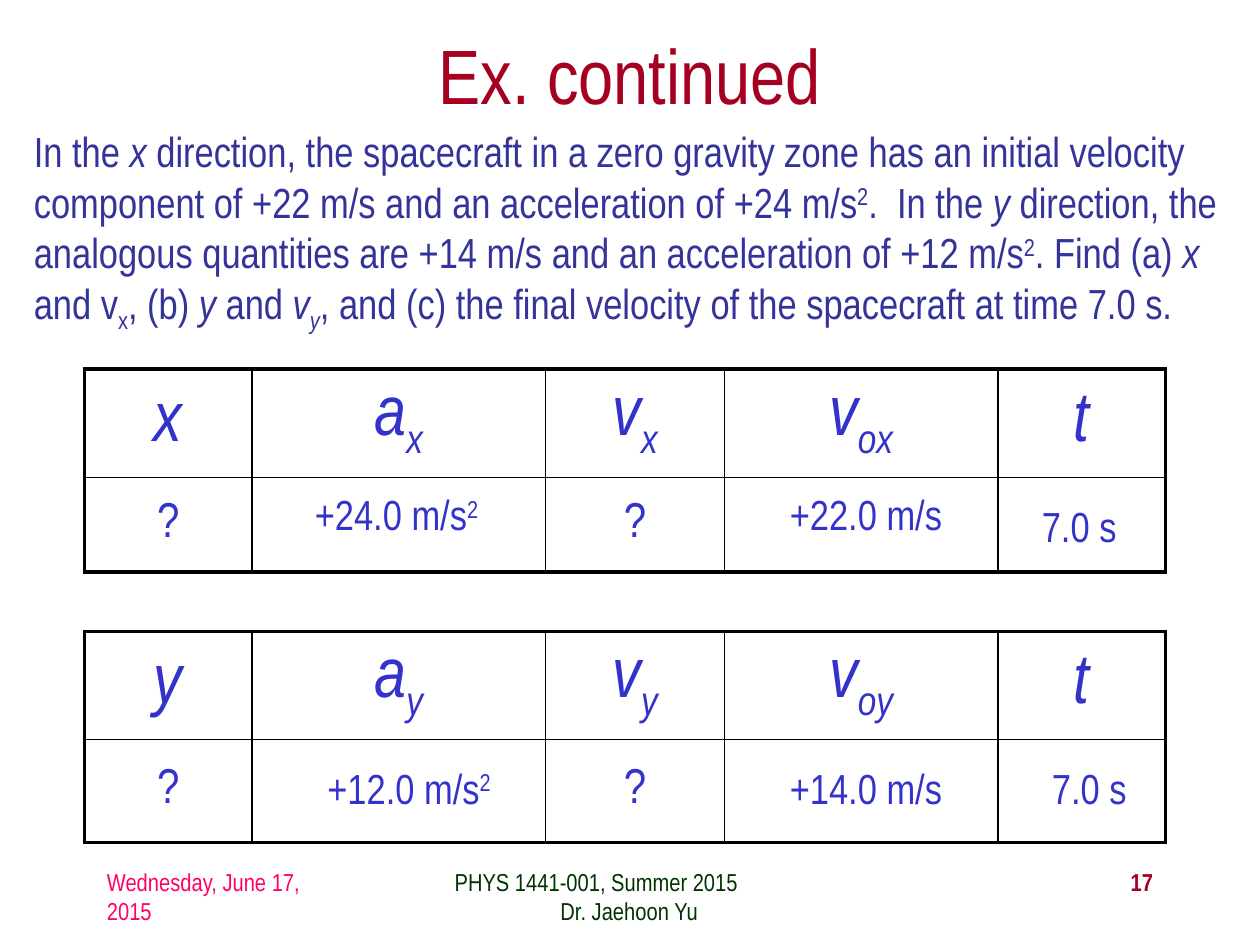
from lxml import etree
from pptx import Presentation
from pptx.dml.color import RGBColor
from pptx.enum.text import MSO_ANCHOR, PP_ALIGN
from pptx.oxml.ns import qn
from pptx.util import Inches, Pt

LEFT, CENTER, RIGHT = PP_ALIGN.LEFT, PP_ALIGN.CENTER, PP_ALIGN.RIGHT
TOP, MIDDLE = MSO_ANCHOR.TOP, MSO_ANCHOR.MIDDLE
FONT = "Arial Narrow"
RED, NAVY, BLUE, PINK, GREEN = "A50021", "333399", "3333CC", "FF0066", "003300"
BASELINES = {"sup": "30000", "sub": "-25000"}

PROBLEM = [
    ("In the", ""), (" x", "i"),
    (" direction, the spacecraft in a zero gravity zone has an initial velocity "
     "component of +22 m/s and an acceleration of +24 m/s", ""),
    ("2", "sup"), (".  In the ", ""), ("y", "i"),
    (" direction, the analogous quantities are +14 m/s and an acceleration of +12 m/s", ""),
    ("2", "sup"), (". Find (a) ", ""), ("x", "i"), (" and v", ""), ("x", "sub"),
    (", (b) ", ""), ("y", "i"), (" and ", ""), ("v", "i"), ("y", "i sub"),
    (", and (c) the final velocity of the spacecraft at time 7.0 s.", ""),
]
COLUMN_WIDTHS = [1.33, 2.33, 1.42, 2.17, 1.33]
TABLES = [
    {"axis": "x", "top": 2.93, "rows": [0.82, 0.75]},
    {"axis": "y", "top": 5.01, "rows": [0.83, 0.82]},
]
VALUES = [
    (2.4, 3.83, 1.51, [("+24.0 m/s", ""), ("2", "sup")]),
    (6.17, 3.83, 1.41, [("+22.0 m/s", "")]),
    (8.17, 3.92, 0.8, [("7.0 s", "")]),
    (2.5, 6, 1.51, [("+12.0 m/s", ""), ("2", "sup")]),
    (6.17, 6, 1.41, [("+14.0 m/s", "")]),
    (8.25, 6, 0.8, [("7.0 s", "")]),
]
COURSE_LINES = [("PHYS 1441-001, Summer 2015", 0.09), ("Dr. Jaehoon Yu", 0.93)]


def color(value):
    return RGBColor.from_string(value)


def write(para, runs, size, ink, align=LEFT):
    para.alignment = align
    for text, style in runs:
        span = para.add_run()
        span.text = text
        span.font.name = FONT
        span.font.size = Pt(size)
        span.font.color.rgb = color(ink)
        marks = style.split()
        span.font.italic = "i" in marks
        span.font.bold = "b" in marks
        for mark in marks:
            if mark in BASELINES:
                span._r.get_or_add_rPr().set("baseline", BASELINES[mark])


def add_text(page, area, runs, size, ink, align=LEFT, anchor=TOP, wrap=True):
    frame = page.shapes.add_textbox(*map(Inches, area)).text_frame
    frame.word_wrap = wrap
    frame.vertical_anchor = anchor
    write(frame.paragraphs[0], runs, size, ink, align)
    return frame


def set_border(cell, side, points):
    line = etree.SubElement(cell._tc.get_or_add_tcPr(), qn(f"a:ln{side}"), w=str(Pt(points)))
    fill = etree.SubElement(line, qn("a:solidFill"))
    etree.SubElement(fill, qn("a:srgbClr"), val="000000")


def add_motion_table(page, axis, top, rows):
    header = [
        [(axis, "i")],
        [("a", "i"), (axis, "i sub")],
        [("v", "i"), (axis, "i sub")],
        [("v", "i"), ("o" + axis, "i sub")],
        [("t", "i")],
    ]
    unknown = [("?", "")]
    content = [header, [unknown, [], unknown, [], []]]
    last_row, last_column = len(rows) - 1, len(COLUMN_WIDTHS) - 1
    table = page.shapes.add_table(
        len(rows), len(COLUMN_WIDTHS), Inches(0.67), Inches(top),
        Inches(sum(COLUMN_WIDTHS)), Inches(sum(rows))).table
    table.first_row = table.horz_banding = False
    for column, width in zip(table.columns, COLUMN_WIDTHS):
        column.width = Inches(width)
    for r, height in enumerate(rows):
        table.rows[r].height = Inches(height)
        for c, runs in enumerate(content[r]):
            cell = table.cell(r, c)
            cell.vertical_anchor = MIDDLE
            write(cell.text_frame.paragraphs[0], runs, 28 if r else 40, BLUE, CENTER)
            outer = {"L": c == 0, "R": c == last_column, "T": r == 0, "B": r == last_row}
            for side, is_outer in outer.items():
                set_border(cell, side, 2.25 if is_outer else 1)
            cell.fill.background()


deck = Presentation()
deck.slide_width, deck.slide_height = Inches(10), Inches(7.5)
page = deck.slides.add_slide(deck.slide_layouts[6])

add_text(page, (0.75, 0.17, 8.5, 0.83), [("Ex. continued", "")], 44, RED, CENTER, MIDDLE)
add_text(page, (0.17, 0.95, 9.67, 1.72), PROBLEM, 24, NAVY)
for entry in TABLES:
    add_motion_table(page, **entry)
for left, top, width, runs in VALUES:
    add_text(page, (left, top, width, 0.5), runs, 24, BLUE, wrap=False)

add_text(page, (0.75, 6.83, 2.08, 0.5), [("Wednesday, June 17, 2015", "")], 14, PINK)
course = add_text(page, (3.42, 6.83, 3.17, 0.5), [], 14, GREEN)
course.add_paragraph()
for para, (text, indent) in zip(course.paragraphs, COURSE_LINES):
    para._p.get_or_add_pPr().set("marL", str(Inches(indent)))
    write(para, [(text, "")], 14, GREEN)
add_text(page, (7.17, 6.83, 2.08, 0.5), [("17", "b")], 14, RED, RIGHT)

deck.save("out.pptx")
